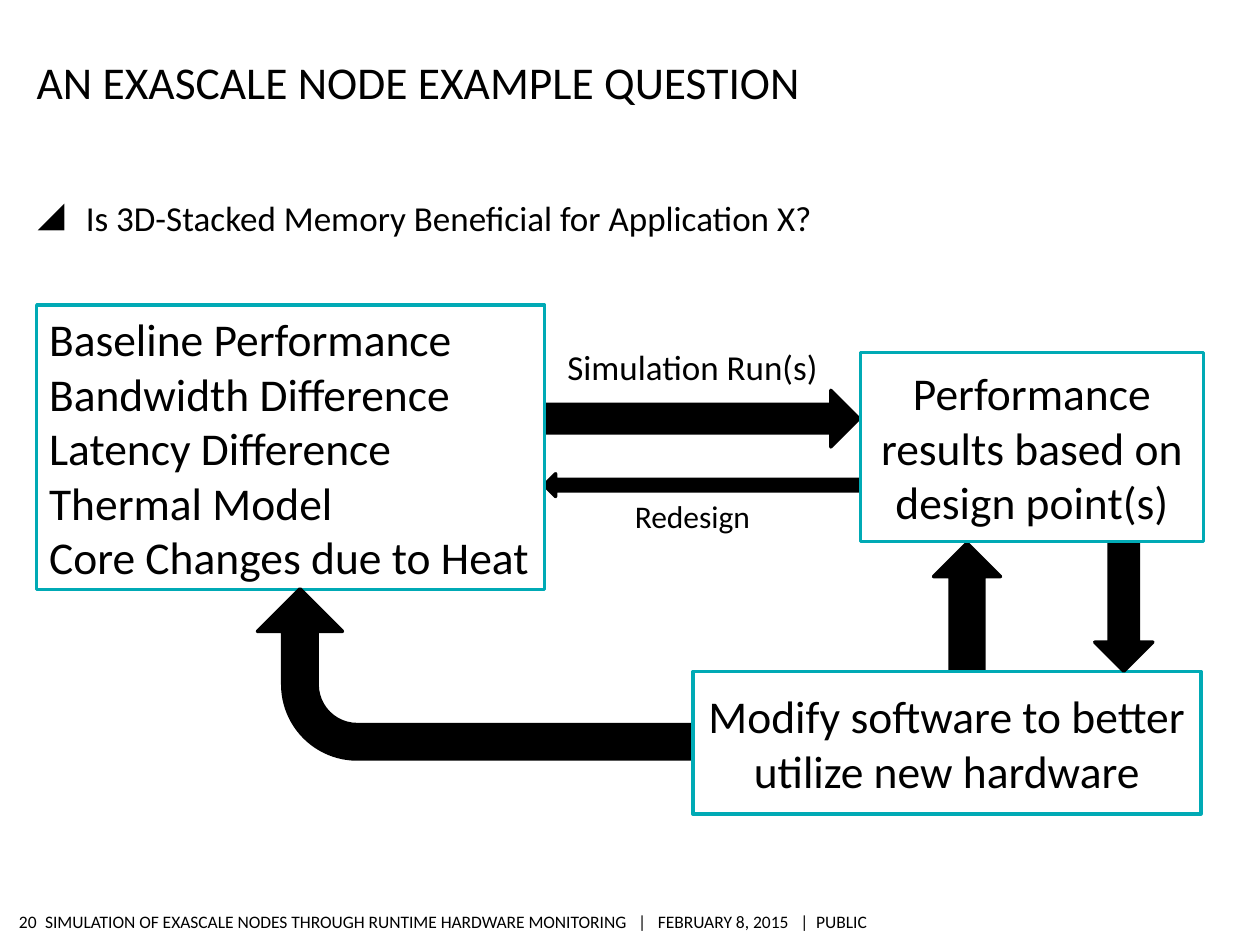
from dataclasses import dataclass

from lxml import etree
from pptx import Presentation
from pptx.dml.color import RGBColor
from pptx.enum.shapes import MSO_SHAPE
from pptx.enum.text import MSO_ANCHOR, PP_ALIGN
from pptx.oxml.ns import qn
from pptx.util import Cm, Pt

LEFT, CENTER, RIGHT = PP_ALIGN.LEFT, PP_ALIGN.CENTER, PP_ALIGN.RIGHT
TOP, MIDDLE, BOTTOM = MSO_ANCHOR.TOP, MSO_ANCHOR.MIDDLE, MSO_ANCHOR.BOTTOM
RECTANGLE = MSO_SHAPE.RECTANGLE
RIGHT_ARROW, UP_ARROW = MSO_SHAPE.RIGHT_ARROW, MSO_SHAPE.UP_ARROW
DOWN_ARROW, BENT_ARROW = MSO_SHAPE.DOWN_ARROW, MSO_SHAPE.BENT_ARROW


@dataclass(frozen=True)
class Theme:
    font: str = "Calibri"
    ink: RGBColor = RGBColor(0x00, 0x00, 0x00)
    paper: RGBColor = RGBColor(0xFF, 0xFF, 0xFF)
    accent: RGBColor = RGBColor(0x00, 0xAA, 0xB5)
    line: Pt = Pt(2)
    large: Pt = Pt(26)
    medium: Pt = Pt(20)
    small: Pt = Pt(18)
    footer: Pt = Pt(10)


THEME = Theme()
DEFAULT_INSETS = (0.25, 0.13, 0.25, 0.13)


def write(frame, lines, size, align=LEFT, anchor=MIDDLE,
          insets=DEFAULT_INSETS, wrap=True):
    """Fill a text frame with one paragraph per line."""
    frame.word_wrap = wrap
    frame.vertical_anchor = anchor
    (frame.margin_left, frame.margin_top,
     frame.margin_right, frame.margin_bottom) = map(Cm, insets)
    for index, line in enumerate(lines):
        paragraph = frame.add_paragraph() if index else frame.paragraphs[0]
        paragraph.text = line
        paragraph.alignment = align
        paragraph.font.name = THEME.font
        paragraph.font.size = size
        paragraph.font.color.rgb = THEME.ink


def add_text(slide, box, text, size, **layout):
    frame = slide.shapes.add_textbox(*map(Cm, box)).text_frame
    write(frame, [text], size, **layout)
    return frame.paragraphs[0]


def add_bullet(slide, box, text):
    paragraph = add_text(slide, box, "", THEME.medium, anchor=TOP,
                         insets=(0, 0.13, 0, 0.13))
    paragraph.text = text
    properties = paragraph._p.get_or_add_pPr()
    properties.set("marL", str(Cm(0.97)))
    properties.set("indent", str(-Cm(0.97)))
    # Bullet elements belong before the default run properties
    colour = etree.Element(qn("a:buClr"))
    etree.SubElement(colour, qn("a:srgbClr")).set("val", str(THEME.ink))
    mark = etree.Element(qn("a:buChar"))
    mark.set("char", "◢")
    properties.insert(0, colour)
    properties.insert(1, mark)


def add_outlined(slide, kind, box, fill, line):
    shape = slide.shapes.add_shape(kind, *map(Cm, box))
    shape.shadow.inherit = False
    shape.fill.solid()
    shape.fill.fore_color.rgb = fill
    shape.line.color.rgb = line
    shape.line.width = THEME.line
    return shape


def add_stage(slide, box, lines, align=CENTER):
    stage = add_outlined(slide, RECTANGLE, box, THEME.paper, THEME.accent)
    write(stage.text_frame, lines, THEME.large, align)


def add_arrow(slide, kind, box, rotation=0, adjustments=()):
    arrow = add_outlined(slide, kind, box, THEME.ink, THEME.ink)
    arrow.rotation = rotation
    for index, value in enumerate(adjustments):
        arrow.adjustments[index] = value


def add_arrow_label(slide, top, height, text, size):
    label = add_text(slide, (11, top, 5.92, height), text, size, align=CENTER)
    label.line_spacing = 0.9
    label.space_after = Pt(3)


def add_footer(slide):
    style = dict(insets=(0, 0.1, 0, 0.1), wrap=False)
    add_text(slide, (0.91, 18.24, 17.25, 0.66),
             "SIMULATION OF EXASCALE NODES THROUGH RUNTIME HARDWARE MONITORING"
             "   |   FEBRUARY 8, 2015   |  PUBLIC", THEME.footer, **style)
    add_text(slide, (0.33, 18.24, 0.41, 0.66), "20", THEME.footer,
             align=RIGHT, **style)


def main():
    deck = Presentation()
    deck.slide_width, deck.slide_height = Cm(25.4), Cm(19.05)
    slide = deck.slides.add_slide(deck.slide_layouts[6])

    # Footer, title and question
    add_footer(slide)
    add_text(slide, (0.74, 0.86, 21.34, 1.32),
             "AN EXASCALE NODE EXAMPLE QUESTION", THEME.large,
             anchor=BOTTOM, insets=(0, 0.13, 0, 0))
    add_bullet(slide, (0.76, 3.84, 23.88, 13.72),
               "Is 3D-Stacked Memory Beneficial for Application X?")

    # Model inputs and the simulation loop
    add_arrow(slide, RIGHT_ARROW, (10.97, 9.55, 6.73, 0.46), rotation=180)
    add_arrow(slide, RIGHT_ARROW, (10.54, 7.87, 6.78, 1.14))
    add_stage(slide, (0.74, 6.15, 10.24, 5.74),
              ["Baseline Performance", "Bandwidth Difference",
               "Latency Difference", "Thermal Model",
               "Core Changes due to Heat"], LEFT)
    add_arrow_label(slide, 6.93, 1.02, "Simulation Run(s)", THEME.medium)
    add_arrow_label(slide, 9.98, 0.94, "Redesign", THEME.small)

    # Software changes feeding back into inputs and results
    add_arrow(slide, UP_ARROW, (18.82, 10.95, 1.35, 2.62))
    add_arrow(slide, BENT_ARROW, (7.87, 9.19, 3.43, 8.79), rotation=270,
              adjustments=(0.202, 0.25, 0.25, 0.438))
    add_stage(slide, (13.97, 13.54, 10.24, 2.87),
              ["Modify software to better utilize new hardware"])
    add_arrow(slide, DOWN_ARROW, (22.07, 10.46, 1.17, 3.07))
    add_stage(slide, (17.35, 7.11, 6.91, 3.81),
              ["Performance results based on design point(s)"])

    deck.save("out.pptx")


if __name__ == "__main__":
    main()
